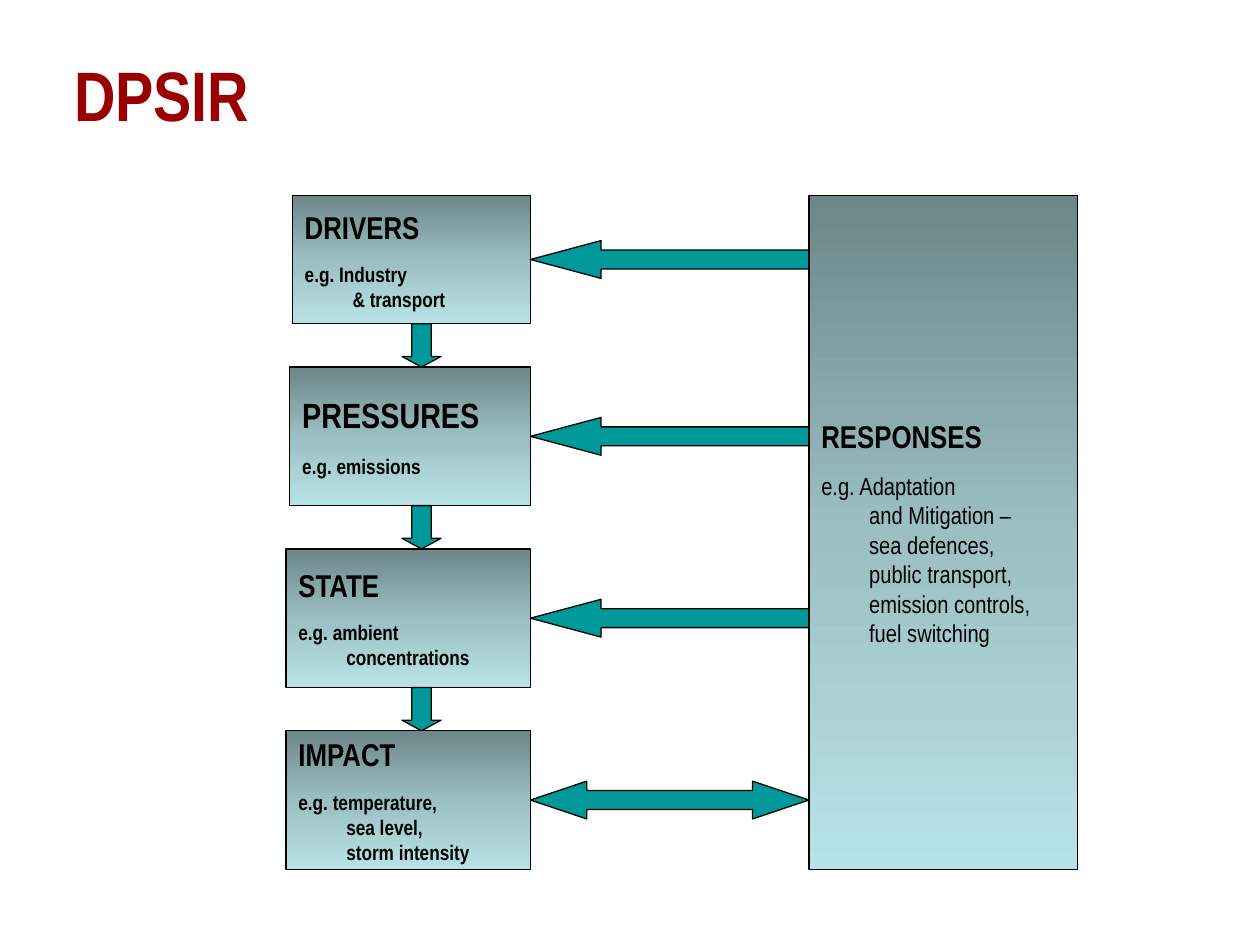
"""Build the DPSIR framework slide: four stacked stages linked to responses."""
import copy

import pptx
import pptx.dml.color
import pptx.enum.shapes
import pptx.enum.text
import pptx.oxml
import pptx.oxml.ns
import pptx.util

Inches, Pt = pptx.util.Inches, pptx.util.Pt
SHAPES = pptx.enum.shapes.MSO_SHAPE
ANCHOR = pptx.enum.text.MSO_ANCHOR
FONT = "Arial Narrow"
COLORS = {"title": "990002", "text": "000000", "line": "000000", "arrow": "009999"}
GRADIENT = [(0, "6D8688"), (0.5, "9BBFC2"), (1, "B8E3E6")]

TITLE = "DPSIR"
STAGES = [
    {"heading": "DRIVERS", "example": "e.g. Industry \n& transport",
     "left": 2.32, "height": 1.02, "size": 18, "arrow": "left"},
    {"heading": "PRESSURES", "example": "e.g. emissions",
     "left": 2.3, "height": 1.1, "size": 20, "arrow": "left"},
    {"heading": "STATE", "example": "e.g. ambient\nconcentrations",
     "left": 2.27, "height": 1.1, "size": 18, "arrow": "left"},
    {"heading": "IMPACT", "example": "e.g. temperature,\nsea level,\nstorm intensity",
     "left": 2.27, "height": 1.1, "size": 18, "arrow": "both"},
]
RESPONSES = {
    "heading": "RESPONSES",
    "example": "e.g. Adaptation \nand Mitigation – \nsea defences, \n"
               "public transport, \nemission controls, \nfuel switching",
}
SIDE_ARROWS = {"left": (SHAPES.LEFT_ARROW, 1.87), "both": (SHAPES.LEFT_RIGHT_ARROW, 1.49)}

TOP, FIRST_BOTTOM, LAST_BOTTOM = 1.55, 2.57, 6.9
PITCH = (LAST_BOTTOM - FIRST_BOTTOM) / (len(STAGES) - 1)
STAGE_RIGHT, RESPONSE_LEFT, RESPONSE_WIDTH = 4.21, 6.42, 2.13
DOWN_LEFT, DOWN_WIDTH, SIDE_HEIGHT = 3.19, 0.31, 0.3


def color(value):
    return pptx.dml.color.RGBColor.from_string(value)


def style_font(font, size, value, bold=True):
    font.name, font.size, font.bold = FONT, Pt(size), bold
    font.color.rgb = color(value)


def add_outlined(slide, kind, left, top, width, height):
    shape = slide.shapes.add_shape(
        kind, Inches(left), Inches(top), Inches(width), Inches(height))
    shape.shadow.inherit = False
    shape.line.color.rgb = color(COLORS["line"])
    shape.line.width = Pt(0.75)
    return shape


def fill_gradient(shape):
    shape.fill.gradient()
    shape.fill.gradient_angle = 270
    stop_list = shape._element.spPr.find(".//" + pptx.oxml.ns.qn("a:gsLst"))
    stop_list.append(copy.deepcopy(stop_list[0]))
    for stop, (position, value) in zip(shape.fill.gradient_stops, GRADIENT):
        stop.position = position
        stop.color.rgb = color(value)


def hang_paragraph(paragraph):
    properties = paragraph._p.get_or_add_pPr()
    properties.set("marL", str(Inches(0.38)))
    properties.set("indent", str(-Inches(0.38)))
    properties.append(pptx.oxml.parse_xml(
        f'<a:spcAft {pptx.oxml.ns.nsdecls("a")}><a:spcPct val="50000"/></a:spcAft>'))


def add_box(slide, content, place, heading_size, example_size, example_bold):
    shape = add_outlined(slide, SHAPES.RECTANGLE, *place)
    fill_gradient(shape)
    frame = shape.text_frame
    frame.word_wrap = True
    frame.vertical_anchor = ANCHOR.MIDDLE
    rows = [(content["heading"], heading_size, True),
            (content["example"], example_size, example_bold)]
    for index, (text, size, bold) in enumerate(rows):
        paragraph = frame.add_paragraph() if index else frame.paragraphs[0]
        paragraph.text = text
        paragraph.alignment = pptx.enum.text.PP_ALIGN.LEFT
        hang_paragraph(paragraph)
        style_font(paragraph.font, size, COLORS["text"], bold)


def add_arrow(slide, kind, place, head):
    shape = add_outlined(slide, kind, *place)
    shape.fill.solid()
    shape.fill.fore_color.rgb = color(COLORS["arrow"])
    shape.adjustments[0], shape.adjustments[1] = 0.5, head


def add_title(slide):
    box = slide.shapes.add_textbox(Inches(0.49), Inches(0.29), Inches(9.11), Inches(0.91))
    frame = box.text_frame
    frame.word_wrap = True
    frame.vertical_anchor = ANCHOR.MIDDLE
    paragraph = frame.paragraphs[0]
    paragraph.text = TITLE
    style_font(paragraph.font, 40, COLORS["title"])


def main():
    presentation = pptx.Presentation()
    presentation.slide_width, presentation.slide_height = Inches(10), Inches(7.5)
    slide = presentation.slides.add_slide(presentation.slide_layouts[6])
    add_title(slide)
    add_box(slide, RESPONSES, (RESPONSE_LEFT, TOP, RESPONSE_WIDTH, LAST_BOTTOM - TOP),
            18, 14, False)
    for index, stage in enumerate(STAGES):
        left, height = stage["left"], stage["height"]
        bottom = FIRST_BOTTOM + index * PITCH
        add_box(slide, stage, (left, bottom - height, STAGE_RIGHT - left, height),
                stage["size"], 12, True)
        kind, head = SIDE_ARROWS[stage["arrow"]]
        add_arrow(slide, kind, (STAGE_RIGHT, bottom - height / 2 - SIDE_HEIGHT / 2,
                                RESPONSE_LEFT - STAGE_RIGHT, SIDE_HEIGHT), head)
        if index < len(STAGES) - 1:
            gap = PITCH - STAGES[index + 1]["height"]
            add_arrow(slide, SHAPES.DOWN_ARROW, (DOWN_LEFT, bottom, DOWN_WIDTH, gap), 0.27)
    presentation.save("out.pptx")


if __name__ == "__main__":
    main()
